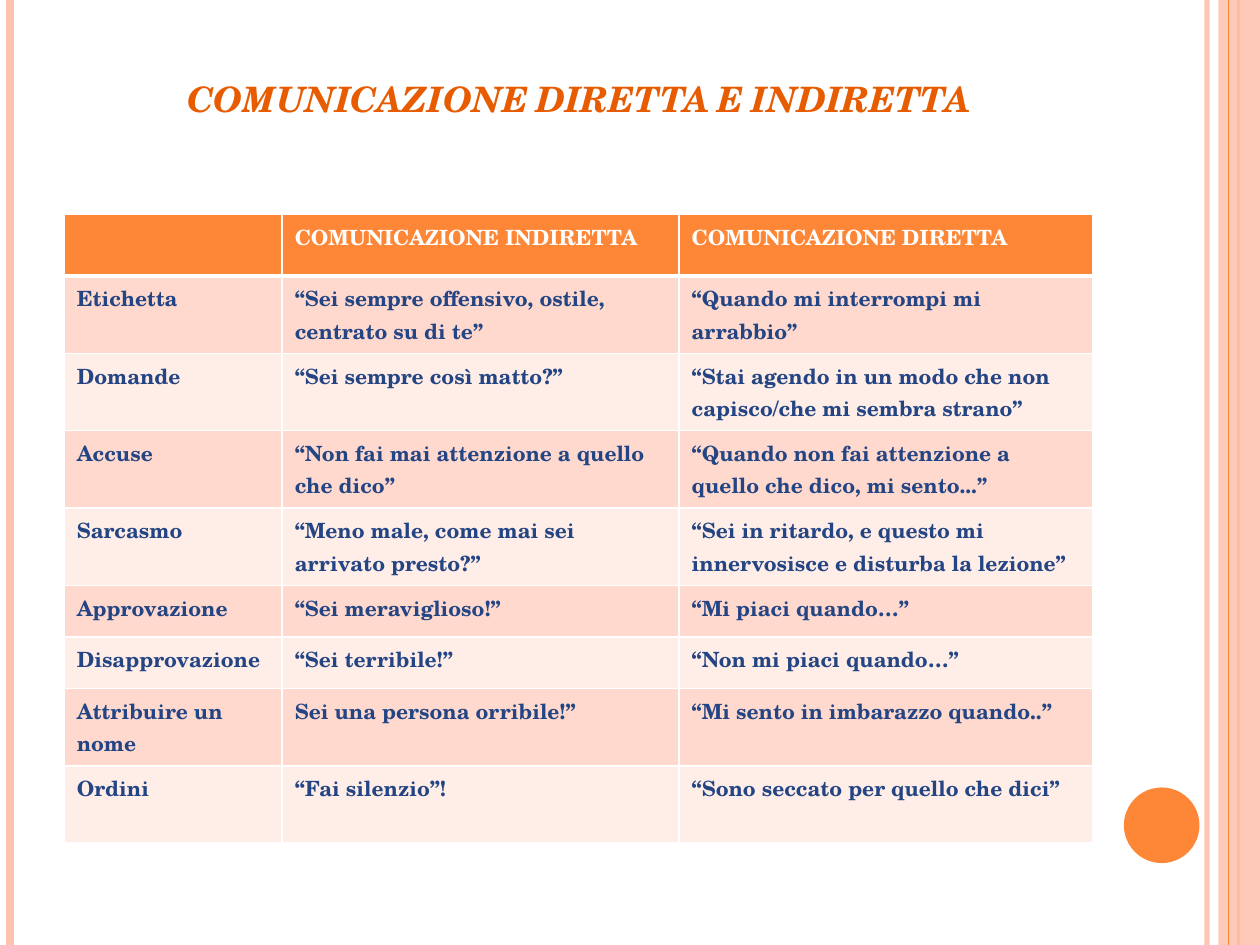
from lxml import etree
from pptx import Presentation
from pptx.dml.color import RGBColor
from pptx.enum.shapes import MSO_CONNECTOR, MSO_SHAPE
from pptx.enum.text import MSO_ANCHOR, PP_ALIGN
from pptx.oxml.ns import qn
from pptx.util import Inches, Pt

STRAIGHT = MSO_CONNECTOR.STRAIGHT
RECTANGLE, OVAL = MSO_SHAPE.RECTANGLE, MSO_SHAPE.OVAL
BOTTOM, CENTER = MSO_ANCHOR.BOTTOM, PP_ALIGN.CENTER
FONT = "TeX Gyre Schola"
ORANGE = RGBColor(0xFE, 0x86, 0x37)
PEACH = RGBColor(0xFE, 0xC3, 0xAE)
TITLE_COLOR = RGBColor(0xE7, 0x5C, 0x01)
NAVY = RGBColor(0x24, 0x45, 0x83)
WHITE = RGBColor(0xFF, 0xFF, 0xFF)
BANDS = [RGBColor(0xFF, 0xED, 0xE8), RGBColor(0xFF, 0xD9, 0xCE)]


def add_text(para, text, size, color):
    span = para.add_run()
    span.text = text
    span.font.name = FONT
    span.font.size = Pt(size)
    span.font.bold = True
    span.font.color.rgb = color
    return span


def set_alpha(element, percent):
    color = element.find(".//" + qn("a:srgbClr"))
    etree.SubElement(color, qn("a:alpha"), val=str(percent * 1000))


deck = Presentation()
deck.slide_width = Inches(10)
deck.slide_height = Inches(7.5)
page = deck.slides.add_slide(deck.slide_layouts[5])

for x, color, width, alpha in [
    (9.58, PEACH, 3, 93),
    (0.08, PEACH, 4.5, 100),
    (9.83, ORANGE, 1.5, 100),
    (9.75, ORANGE, 0.75, 100),
]:
    if x == 9.75:
        band = page.shapes.add_shape(RECTANGLE, Inches(9.67), 0, Inches(0.33), Inches(7.5))
        band.shadow.inherit = False
        band.fill.solid()
        band.fill.fore_color.rgb = PEACH
        band.line.fill.background()
        set_alpha(band.element.spPr, 87)
    stripe = page.shapes.add_connector(STRAIGHT, Inches(x), 0, Inches(x), Inches(7.5))
    stripe.line.color.rgb = color
    stripe.line.width = Pt(width)
    etree.SubElement(stripe._element.spPr, qn("a:effectLst"))
    if alpha < 100:
        set_alpha(stripe._element.spPr, alpha)

disc = page.shapes.add_shape(OVAL, Inches(8.92), Inches(6.25), Inches(0.6), Inches(0.6))
disc.shadow.inherit = False
disc.fill.solid()
disc.fill.fore_color.rgb = ORANGE
disc.line.fill.background()

title = page.shapes.title
title.left, title.top = Inches(0.51), Inches(0.29)
title.width, title.height = Inches(8.17), Inches(0.71)
title.text_frame.vertical_anchor = BOTTOM
title_para = title.text_frame.paragraphs[0]
title_para.alignment = CENTER
title_span = add_text(title_para, "COMUNICAZIONE DIRETTA E INDIRETTA", 20, TITLE_COLOR)
title_span.font.italic = True
title_span.font._element.set("cap", "small")

ROWS = [
    ("", "COMUNICAZIONE INDIRETTA", "COMUNICAZIONE DIRETTA"),
    ("Etichetta", "“Sei sempre offensivo, ostile, centrato su di te”",
     "“Quando mi interrompi mi arrabbio”"),
    ("Domande", "“Sei sempre così matto?”",
     "“Stai agendo in un modo che non capisco/che mi sembra strano”"),
    ("Accuse", "“Non fai mai attenzione a quello che dico”",
     "“Quando non fai attenzione a quello che dico, mi sento...”"),
    ("Sarcasmo", "“Meno male, come mai sei arrivato presto?”",
     "“Sei in ritardo, e questo mi innervosisce e disturba la lezione”"),
    ("Approvazione", "“Sei meraviglioso!”", "“Mi piaci quando…”"),
    ("Disapprovazione", "“Sei terribile!”", "“Non mi piaci quando…”"),
    ("Attribuire un nome", "Sei una persona orribile!”", "“Mi sento in imbarazzo quando..”"),
    ("Ordini", "“Fai silenzio”!", "“Sono seccato per quello che dici”"),
]
COLUMN_WIDTHS = [1.73, 3.15, 3.28]
ROW_HEIGHTS = [0.49, 0.61, 0.61, 0.61, 0.61, 0.41, 0.41, 0.61, 0.61]

table = page.shapes.add_table(
    len(ROWS), len(COLUMN_WIDTHS), Inches(0.51), Inches(1.7),
    Inches(sum(COLUMN_WIDTHS)), Inches(sum(ROW_HEIGHTS)),
).table
for column, width in zip(table.columns, COLUMN_WIDTHS):
    column.width = Inches(width)
for row, height in zip(table.rows, ROW_HEIGHTS):
    row.height = Inches(height)

for r, texts in enumerate(ROWS):
    for c, text in enumerate(texts):
        cell = table.cell(r, c)
        properties = cell._tc.get_or_add_tcPr()
        for side in ("lnL", "lnR", "lnT", "lnB"):
            thick = (r, side) in [(0, "lnB"), (1, "lnT")]
            border = etree.SubElement(properties, qn("a:" + side), w=str(Pt(3 if thick else 1)))
            fill = etree.SubElement(border, qn("a:solidFill"))
            etree.SubElement(fill, qn("a:srgbClr"), val=str(WHITE))
        cell.fill.solid()
        cell.fill.fore_color.rgb = BANDS[r % 2] if r else ORANGE
        if text:
            add_text(cell.text_frame.paragraphs[0], text, 12, NAVY if r else WHITE)

deck.save("out.pptx")
